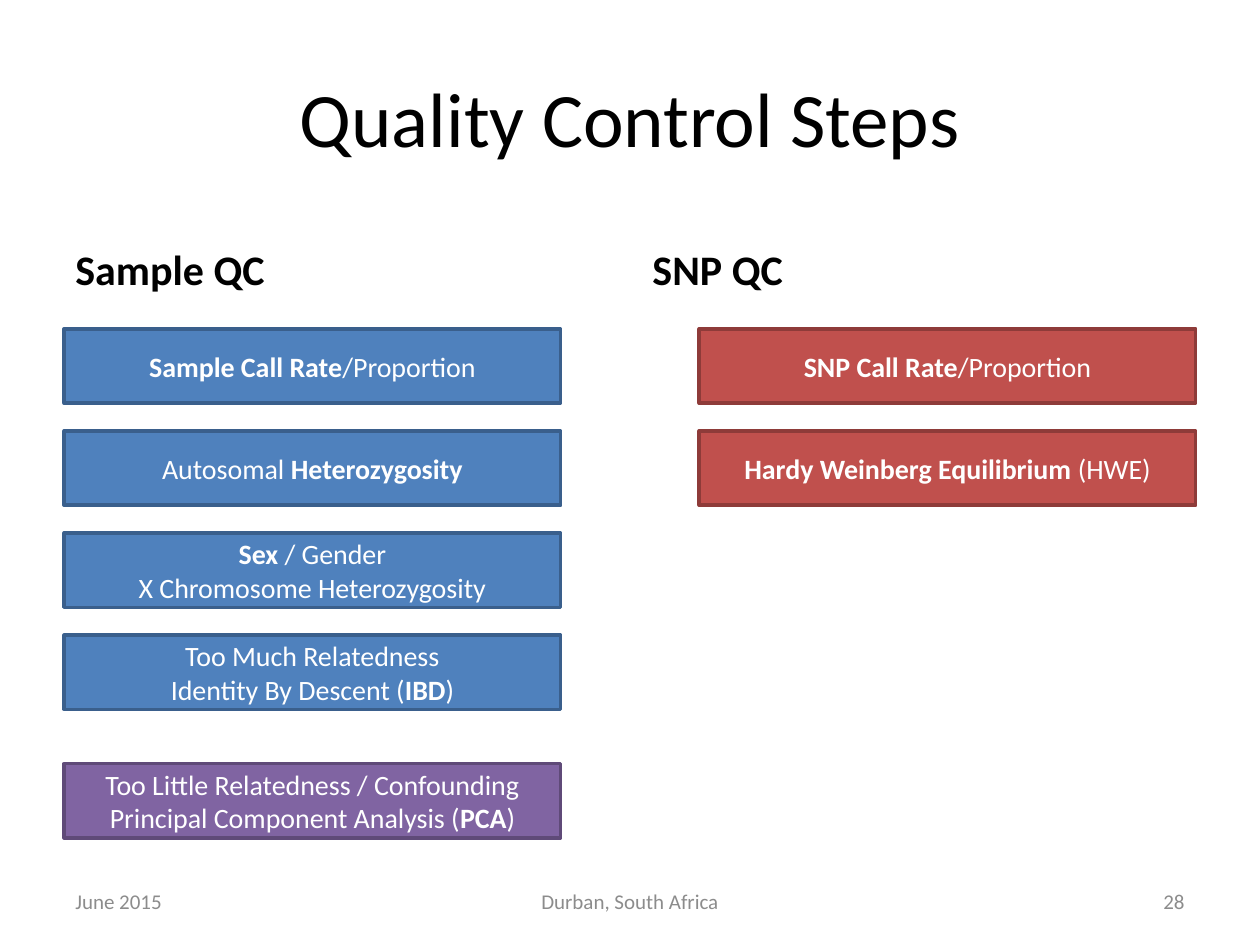
from pptx import Presentation, util as u
from pptx.dml.color import RGBColor
from pptx.enum import shapes, text

COLORS = {
    "ink": "000000", "muted": "8C8C8C", "white": "FFFFFF",
    "blue": "4F81BD", "blue_edge": "3A5F8C",
    "red": "C0504D", "red_edge": "8E3B39",
    "purple": "8064A2", "purple_edge": "5F4A78",
}
FONT = "Calibri"
WIDTH, HEIGHT = 10, 7.5
MARGIN = 0.05 * WIDTH
LEFT, CENTER, RIGHT = text.PP_ALIGN.LEFT, text.PP_ALIGN.CENTER, text.PP_ALIGN.RIGHT
MIDDLE, BOTTOM = text.MSO_ANCHOR.MIDDLE, text.MSO_ANCHOR.BOTTOM

TITLE = "Quality Control Steps"
HEADINGS = ["Sample QC", "SNP QC"]
FOOTERS = [("June 2015", 2.33, LEFT), ("Durban, South Africa", 3.17, CENTER), ("28", 2.33, RIGHT)]
STEPS = [
    (0, 0, "blue", [[("Sample Call Rate", True), ("/Proportion", False)]]),
    (0, 1, "blue", [[("Autosomal ", False), ("Heterozygosity", True)]]),
    (0, 2, "blue", [[("Sex", True), (" / Gender", False)],
                    [("X Chromosome Heterozygosity", False)]]),
    (0, 3, "blue", [[("Too Much Relatedness", False)],
                    [("Identity By Descent (", False), ("IBD", True), (")", False)]]),
    (0, 4.26, "purple", [[("Too Little Relatedness / Confounding", False)],
                         [("Principal Component Analysis (", False), ("PCA", True), (")", False)]]),
    (1, 0, "red", [[("SNP Call Rate", True), ("/Proportion", False)]]),
    (1, 1, "red", [[("Hardy Weinberg Equilibrium", True), (" (HWE)", False)]]),
]
HEADING_WIDTH = 4.42
STEP_WIDTH, STEP_HEIGHT = 3.94, 0.59
STEP_LEFT, STEP_TOP = 0.51, 2.61
COLUMN_PITCH, ROW_PITCH = 5.04, 0.81


def write(box, lines, size, color, align, anchor):
    frame = box.text_frame
    frame.word_wrap = True
    frame.vertical_anchor = anchor
    for index, line in enumerate(lines):
        paragraph = frame.add_paragraph() if index else frame.paragraphs[0]
        paragraph.alignment = align
        for words, bold in line:
            run = paragraph.add_run()
            run.text = words
            run.font.name = FONT
            run.font.size = u.Pt(size)
            run.font.bold = bold
            run.font.color.rgb = RGBColor.from_string(COLORS[color])


def add_label(slide, place, words, size, color, align, anchor=MIDDLE, bold=False):
    label = slide.shapes.add_textbox(*map(u.Inches, place))
    write(label, [[(words, bold)]], size, color, align, anchor)


def add_step(slide, column, row, color, lines):
    place = (STEP_LEFT + column * COLUMN_PITCH, STEP_TOP + row * ROW_PITCH, STEP_WIDTH, STEP_HEIGHT)
    step = slide.shapes.add_shape(shapes.MSO_SHAPE.RECTANGLE, *map(u.Inches, place))
    step.shadow.inherit = False
    step.fill.solid()
    step.fill.fore_color.rgb = RGBColor.from_string(COLORS[color])
    step.line.color.rgb = RGBColor.from_string(COLORS[color + "_edge"])
    step.line.width = u.Pt(2)
    write(step, lines, 16, "white", CENTER, MIDDLE)


def main():
    deck = Presentation()
    deck.slide_width, deck.slide_height = u.Inches(WIDTH), u.Inches(HEIGHT)
    slide = deck.slides.add_slide(deck.slide_layouts[6])
    content_width = WIDTH - 2 * MARGIN

    add_label(slide, (MARGIN, 0.04 * HEIGHT, content_width, 1.25), TITLE, 44, "ink", CENTER)

    heading_pitch = content_width - HEADING_WIDTH
    for column, heading in enumerate(HEADINGS):
        place = (MARGIN + column * heading_pitch, 1.68, HEADING_WIDTH, 0.7)
        add_label(slide, place, heading, 24, "ink", LEFT, BOTTOM, True)

    footer_gap = (content_width - sum(width for _, width, _ in FOOTERS)) / (len(FOOTERS) - 1)
    footer_left = MARGIN
    for words, width, align in FOOTERS:
        add_label(slide, (footer_left, 6.95, width, 0.4), words, 12, "muted", align)
        footer_left += width + footer_gap

    for step in STEPS:
        add_step(slide, *step)

    deck.save("out.pptx")


if __name__ == "__main__":
    main()
